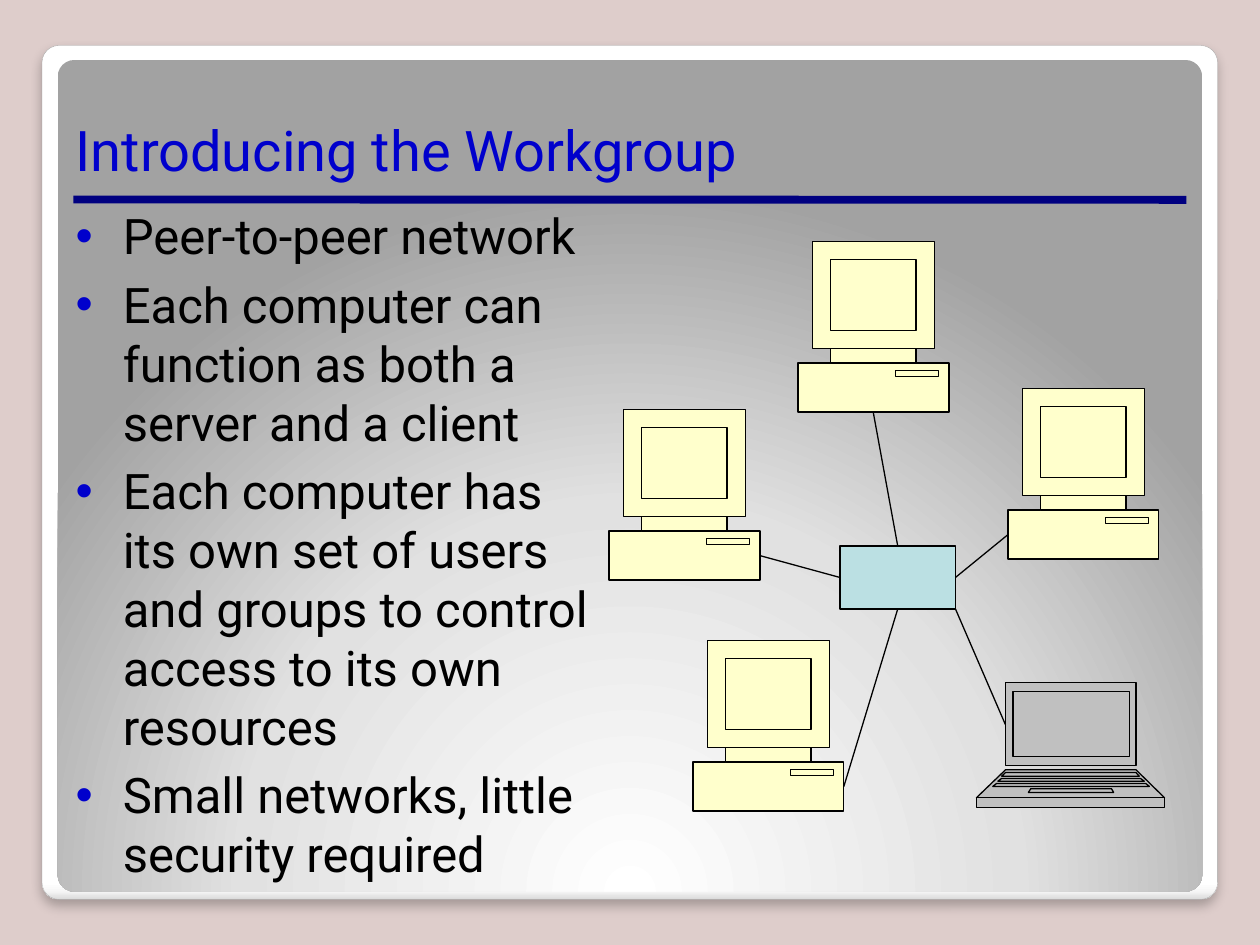
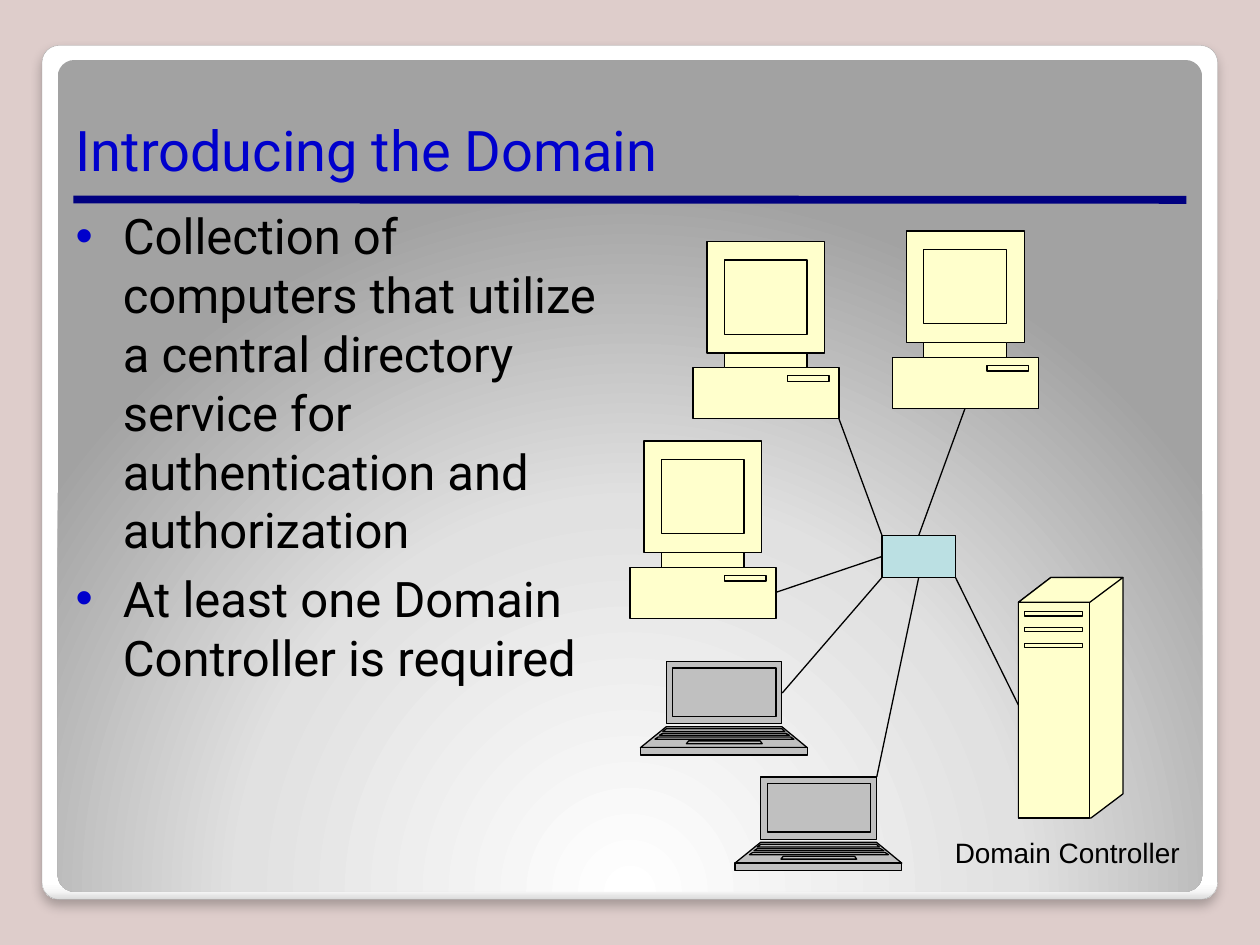
import copy
import pptx
import pptx.util
import pptx.dml.color
import pptx.enum.shapes
import pptx.enum.text
import pptx.oxml
import pptx.oxml.ns

Pt = pptx.util.Pt
RGB = pptx.dml.color.RGBColor
SHAPE = pptx.enum.shapes.MSO_SHAPE
LINE = pptx.enum.shapes.MSO_CONNECTOR.STRAIGHT
ALIGN = pptx.enum.text.PP_ALIGN
ANCHOR = pptx.enum.text.MSO_ANCHOR
FIT = pptx.enum.text.MSO_AUTO_SIZE
NS = pptx.oxml.ns.nsdecls("a")
qn = pptx.oxml.ns.qn

BLACK = RGB(0, 0, 0)
BLUE = RGB(0, 0, 0xCC)
NAVY = RGB(0, 0, 0x80)
ROSE = RGB(0xDE, 0xCD, 0xCB)
EDGE = RGB(0xA4, 0xA4, 0xA4)
CREAM = RGB(0xFF, 0xFF, 0xCC)
SILVER = RGB(0xC0, 0xC0, 0xC0)
AQUA = RGB(0xBB, 0xE0, 0xE3)


def quad(top, low, left, right, lowleft=None, lowright=None):
    lowleft = left if lowleft is None else lowleft
    lowright = right if lowright is None else lowright
    return [(left, top), (right, top), (lowright, low), (lowleft, low)]


def link(shapes, start, end, color, width):
    line = shapes.add_connector(LINE, *[Pt(n) for n in (*start, *end)])
    line.line.color.rgb = color
    line.line.width = Pt(width)
    line.element.spPr.append(pptx.oxml.parse_xml(f"<a:effectLst {NS}/>"))
    return line


TOWER = [
    [
        (78.2, 71.2), (78.2, 62.9), (90.3, 62.9), (90.3, 0), (9.6, 0), (9.6, 62.9),
        (21.4, 62.9), (21.4, 71.2), (0, 71.2), (0, 100), (100, 100), (100, 71.2),
    ],
    quad(62.9, 71.2, 21.4, 78.2),
    quad(10.5, 52.3, 21.4, 78.2),
    quad(75.8, 79, 64.7, 93.3),
]
LAPTOP = [
    quad(0, 66.7, 15.5, 84.8),
    quad(69.8, 92.2, 15.5, 84.8, 0, 100),
    quad(92.2, 100, 0, 100),
    quad(7, 59, 19.4, 81.3),
    quad(72, 75, 15.5, 84.8, 13.4, 86.6),
    quad(85, 88, 28.9, 71.8, 27.6, 73),
    quad(76.8, 79, 13.4, 87.2, 11.4, 89.3),
    quad(80.8, 83.2, 10.7, 90, 8.7, 92),
]
SERVER = [
    [(0, 10.3), (31, 0), (100, 0), (100, 90), (69.5, 100), (0, 100)],
    quad(10.3, 100, 0, 68.3),
    quad(0, 10.3, 31, 100, 0, 68.3),
] + [quad(top, top + 1.8, 5.6, 61.6) for top in (14.2, 20.8, 27.4)]

PAGES = [
    {
        "title": "Introducing the Workgroup",
        "list": [
            "Peer-to-peer network",
            "Each computer can function as both a server and a client",
            "Each computer has its own set of users and groups to control access to its own resources",
            "Small networks, little security required",
        ],
        "kit": [
            (TOWER, CREAM, (86.2, 97.5), [(348, 234), (456, 138), (576, 222), (396, 366)]),
            (LAPTOP, SILVER, (107.4, 71.4), [(558, 390)]),
        ],
        "hub": (480, 312, 66, 36),
        "links": [
            ((434.2, 317.5), (480, 330)),
            ((499, 235.5), (513, 312)),
            ((576, 305.5), (546, 330)),
            ((482.2, 449.5), (513, 348)),
            ((574.5, 414), (546, 348)),
        ],
    },
    {
        "title": "Introducing the Domain",
        "list": [
            "Collection of computers that utilize a central directory service for authentication and authorization",
            "At least one Domain Controller is required",
        ],
        "kit": [
            (SERVER, CREAM, (59.7, 137.4), [(582, 330)]),
            (LAPTOP, SILVER, (95.3, 53.4), [(420, 444), (366, 378)]),
            (TOWER, CREAM, (83.4, 101.3), [(360, 252), (396, 138), (510, 132)]),
        ],
        "hub": (504, 306, 42, 24),
        "links": [
            ((582, 403), (546, 330)),
            ((501, 444), (525, 330)),
            ((447, 396), (504, 330)),
            ((443.4, 338.5), (504, 318)),
            ((479.4, 239.3), (504, 306)),
            ((551.5, 233.3), (525, 306)),
        ],
        "label": "Domain Controller",
    },
]

deck = pptx.Presentation()
deck.slide_width, deck.slide_height = Pt(720), Pt(540)
layout = deck.slide_layouts[1]
layout.background.fill.solid()
layout.background.fill.fore_color.rgb = ROSE
slides = [deck.slides.add_slide(layout) for page in PAGES]

PANELS = [
    (
        (24, 26, 671.8, 488),
        [(0, "FFFFFF"), (98, "FFFFFF"), (99, "F7F7F7"), (100, "DADADA")],
        '<a:lin ang="5400000" scaled="0"/>',
    ),
    (
        (33, 34.3, 654, 475.2),
        [(0, "FFFFFF"), (55, "E1E1E1"), (100, "A2A2A2")],
        '<a:path path="circle"><a:fillToRect l="50000" t="175000" r="50000" b="-75000"/></a:path>',
    ),
]
frame = []
for box, stops, way in PANELS:
    panel = slides[0].shapes.add_shape(SHAPE.ROUNDED_RECTANGLE, *[Pt(n) for n in box])
    panel.adjustments[0] = 0.02
    panel.shadow.inherit = False
    panel.line.fill.background()
    marks = "".join(
        f'<a:gs pos="{spot * 1000}"><a:srgbClr val="{tone}"/></a:gs>' for spot, tone in stops
    )
    panel.element.spPr.insert(2, pptx.oxml.parse_xml(
        f'<a:gradFill {NS} rotWithShape="1"><a:gsLst>{marks}</a:gsLst>{way}</a:gradFill>'
    ))
    frame.append(panel)

card = frame[0]
card.line.color.rgb = EDGE
card.line.width = Pt(0.16)
card.element.spPr.find(qn("a:effectLst")).append(pptx.oxml.parse_xml(
    f'<a:outerShdw {NS} blurRad="{Pt(6)}" dist="{Pt(4)}" dir="5400000" rotWithShape="0">'
    '<a:srgbClr val="000000"><a:alpha val="25000"/></a:srgbClr></a:outerShdw>'
))
frame.append(link(slides[0].shapes, (42, 114), (678, 114.2), NAVY, 4.5))
for spot, part in enumerate(frame):
    layout.shapes.element.insert(2 + spot, part.element)

for slide, page in zip(slides, PAGES):
    title, body = slide.placeholders
    for holder, box, anchor, lines, size, color in (
        (title, (36, 36, 648, 72), ANCHOR.BOTTOM, [page["title"]], 32, BLUE),
        (body, (36, 114, 318, 396), ANCHOR.TOP, page["list"], 28, BLACK),
    ):
        holder.left, holder.top, holder.width, holder.height = [Pt(n) for n in box]
        text = holder.text_frame
        text.vertical_anchor = anchor
        text.auto_size = FIT.NONE
        for spot, words in enumerate(lines):
            para = text.add_paragraph() if spot else text.paragraphs[0]
            para.alignment = ALIGN.LEFT
            run = para.add_run()
            run.text = words
            run.font.name = "Roboto"
            run.font.size = Pt(size)
            run.font.color.rgb = color
            if holder is body:
                para._p.get_or_add_pPr().append(pptx.oxml.parse_xml(
                    f'<a:buClr {NS}><a:srgbClr val="{BLUE}"/></a:buClr>'
                ))

    net = slide.shapes.add_group_shape().shapes
    solids = []
    for parts, color, (width, height), spots in page["kit"]:
        for left, top in spots:
            rings = [
                [(Pt(left + x * width / 100), Pt(top + y * height / 100)) for x, y in part]
                for part in parts
            ]
            pen = net.build_freeform(*rings[0][0])
            pen.add_line_segments(rings[0][1:], close=True)
            for ring in rings[1:]:
                pen.move_to(*ring[0])
                pen.add_line_segments(ring[1:], close=True)
            device = pen.convert_to_shape()
            solids.append((device, color))

            whole = device.element.spPr.find(".//" + qn("a:path"))
            holder = whole.getparent()
            for step in list(whole):
                if step.tag == qn("a:moveTo"):
                    trace = copy.copy(whole)
                    for old in list(trace):
                        trace.remove(old)
                    holder.append(trace)
                trace.append(step)
            holder.remove(whole)

    hub = net.add_shape(SHAPE.RECTANGLE, *[Pt(n) for n in page["hub"]])
    for solid, color in solids + [(hub, AQUA)]:
        solid.shadow.inherit = False
        solid.fill.solid()
        solid.fill.fore_color.rgb = color
        solid.line.color.rgb = BLACK
        solid.line.width = Pt(0.75)
    for start, end in page["links"]:
        link(net, start, end, BLACK, 0.75)

    if "label" in page:
        label = net.add_textbox(Pt(536.8), Pt(474), Pt(144.5), Pt(26.5))
        label.text_frame.word_wrap = False
        label.text_frame.auto_size = FIT.SHAPE_TO_FIT_TEXT
        para = label.text_frame.paragraphs[0]
        para.alignment = ALIGN.RIGHT
        run = para.add_run()
        run.text = page["label"]
        run.font.name = "Arial"
        run.font.size = Pt(16)
        run.font.color.rgb = BLACK

deck.save("out.pptx")
